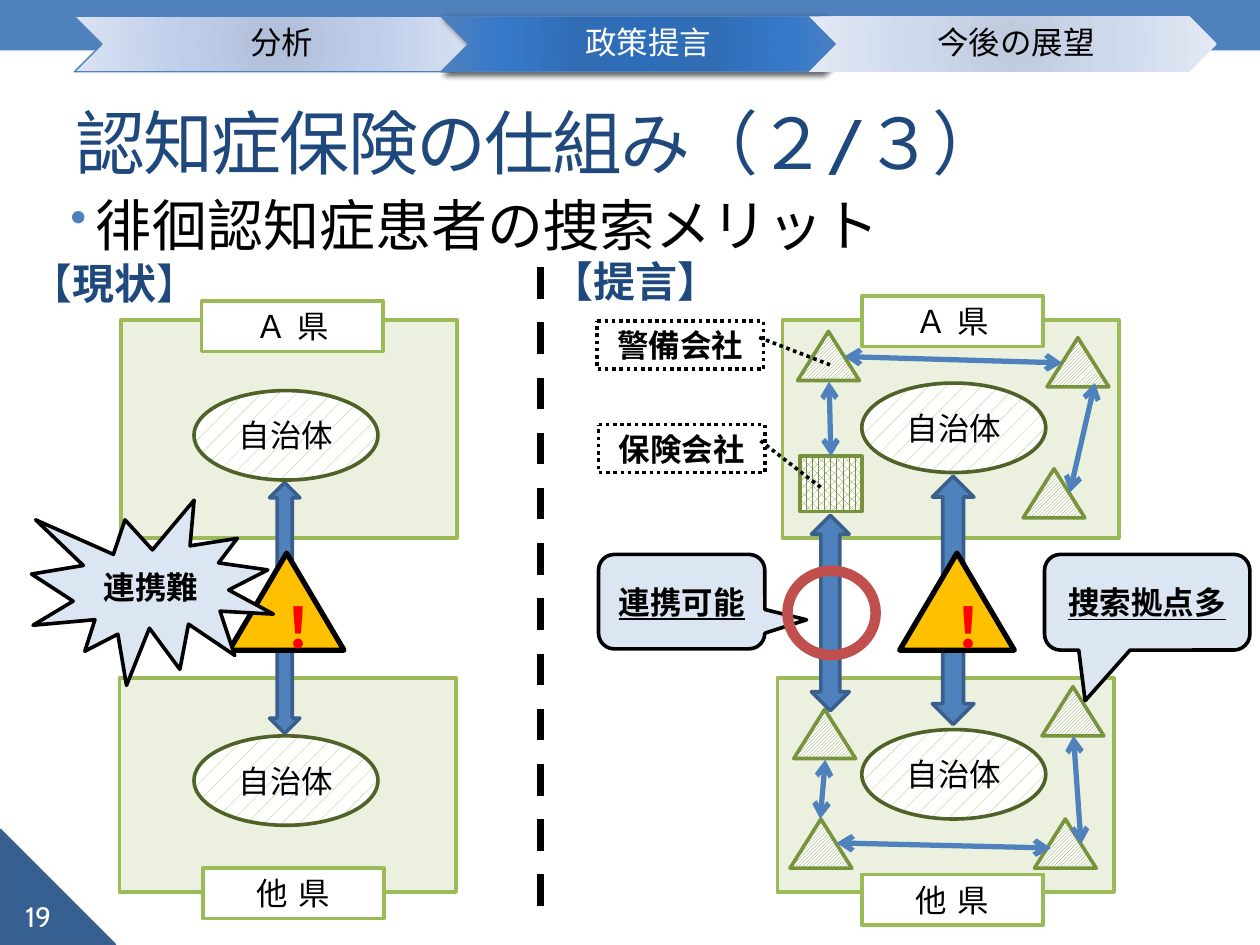
from lxml import etree
from pptx import Presentation
from pptx.dml.color import RGBColor
from pptx.enum.dml import MSO_LINE, MSO_PATTERN
from pptx.enum.shapes import MSO_CONNECTOR, MSO_SHAPE
from pptx.enum.text import MSO_ANCHOR, PP_ALIGN
from pptx.oxml import parse_xml
from pptx.oxml.ns import qn
from pptx.util import Inches, Pt

RECT, OVAL, TRIANGLE = MSO_SHAPE.RECTANGLE, MSO_SHAPE.OVAL, MSO_SHAPE.ISOSCELES_TRIANGLE
DOUBLE_ARROW, BURST = MSO_SHAPE.UP_DOWN_ARROW, MSO_SHAPE.EXPLOSION1
SPEECH, LABEL = MSO_SHAPE.ROUNDED_RECTANGULAR_CALLOUT, MSO_SHAPE.LINE_CALLOUT_1
CHEVRON, CORNER = MSO_SHAPE.CHEVRON, MSO_SHAPE.RIGHT_TRIANGLE
HATCH, SPECKS, WEAVE = (MSO_PATTERN.LIGHT_UPWARD_DIAGONAL, MSO_PATTERN.PERCENT_5,
                        MSO_PATTERN.PERCENT_70)
DOTTED, DASHED = MSO_LINE.ROUND_DOT, MSO_LINE.DASH
CENTER, LEFT = PP_ALIGN.CENTER, PP_ALIGN.LEFT
MIDDLE, TOP = MSO_ANCHOR.MIDDLE, MSO_ANCHOR.TOP

COLUMNS, ROWS = 100, 75
WIDTH, HEIGHT = Inches(10), Inches(7.5)
BLACK, WHITE, BLUE, NAVY = "000000", "FFFFFF", "4F81BD", "1F497D"
GREEN, OLIVE, FOREST, MINT = "9BBB59", "77933C", "4F6228", "EBF1DE"
ICE, EDGE, AMBER, RED, BRICK = "DCE6F2", "3A5F8C", "FFC000", "FF0000", "C0504D"
THIN = 2.08
DRAWING = 'xmlns:a="http://schemas.openxmlformats.org/drawingml/2006/main"'


def rgb(code):
    return RGBColor.from_string(code)


def columns(count):
    return round(WIDTH * count / COLUMNS)


def rows(count):
    return round(HEIGHT * count / ROWS)


def write(shape, text, size=18, color=BLACK, bold=False, underline=False, font="Cabin",
          spacing=0, align=CENTER, anchor=MIDDLE, line_spacing=None):
    """Fill a shape with one paragraph; text is a string or a list of (text, bold)."""
    frame = shape.text_frame
    frame.word_wrap = True
    frame.vertical_anchor = anchor
    para = frame.paragraphs[0]
    para.alignment = align
    para.line_spacing = line_spacing
    for words, heavy in [(text, bold)] if isinstance(text, str) else text:
        span = para.add_run()
        span.text = words
        span.font.size, span.font.name = Pt(size), font
        span.font.bold, span.font.underline = heavy, underline
        span.font.color.rgb = rgb(color)
        properties = span.font._element
        etree.SubElement(properties, qn("a:ea")).set("typeface", "Noto Sans CJK JP")
        if spacing:
            properties.set("spc", str(spacing * 100))
    return para


class Page:
    """The slide, its grid of 100 columns by 75 rows, and its style."""

    def __init__(self, deck):
        self.shapes = deck.slides.add_slide(deck.slide_layouts[6]).shapes

    def shape(self, kind, place, fill=None, line=None, weight=THIN, dash=None,
              pattern=None, adjust=(), text=None, **style):
        left, top, width, height = place
        box = self.shapes.add_shape(kind, columns(left), rows(top), columns(width), rows(height))
        box.shadow.inherit = False
        if pattern:
            box.fill.patterned()
            box.fill.pattern = pattern
            box.fill.fore_color.rgb, box.fill.back_color.rgb = rgb(fill), rgb(WHITE)
        elif fill:
            box.fill.solid()
            box.fill.fore_color.rgb = rgb(fill)
        else:
            box.fill.background()
        if line:
            self.stroke(box.line, line, weight, dash)
        else:
            box.line.fill.background()
        for index, value in enumerate(adjust):
            box.adjustments[index] = value
        if text:
            write(box, text, **style)
        return box

    def stroke(self, line, color, weight, dash=None):
        line.color.rgb, line.width = rgb(color), Pt(weight)
        if dash:
            line.dash_style = dash

    def text(self, place, text, insets=None, **style):
        left, top, width, height = place
        box = self.shapes.add_textbox(columns(left), rows(top), columns(width), rows(height))
        if insets:
            frame = box.text_frame
            frame.margin_left, others = columns(insets[0]), columns(insets[1])
            frame.margin_top = frame.margin_right = frame.margin_bottom = others
        return write(box, text, **style)

    def line(self, start, end, color=BLUE, weight=3, dash=None, arrows=True):
        link = self.shapes.add_connector(MSO_CONNECTOR.STRAIGHT, columns(start[0]),
                                         rows(start[1]), columns(end[0]), rows(end[1]))
        self.stroke(link.line, color, weight, dash)
        etree.SubElement(link._element.spPr, qn("a:effectLst"))
        if arrows:
            for end_name in ("a:headEnd", "a:tailEnd"):
                etree.SubElement(link.line._get_or_add_ln(), qn(end_name)).set("type", "arrow")
        return link

    def tab(self, left, text, stops, line=BLUE, color=BLACK, shadow=False):
        """Draw one navigation chevron with a radial gradient."""
        chevron = self.shape(CHEVRON, (left, 1.3, 32.4, 4.4), line=line, weight=0.75)
        properties = chevron._element.spPr
        marks = "".join(f'<a:gs pos="{position * 1000}"><a:srgbClr val="{code}"/></a:gs>'
                        for position, code in stops)
        gradient = parse_xml(
            f'<a:gradFill {DRAWING} rotWithShape="1"><a:gsLst>{marks}</a:gsLst>'
            '<a:path path="circle"><a:fillToRect l="100000" t="100000" r="100000" b="100000"/>'
            '</a:path></a:gradFill>')
        properties.replace(properties.find(qn("a:noFill")), gradient)
        if shadow:
            properties.find(qn("a:effectLst")).append(parse_xml(
                f'<a:outerShdw {DRAWING} blurRad="{Pt(3)}" dist="{Pt(2)}" dir="2700000">'
                f'<a:srgbClr val="{BLACK}"><a:alpha val="60000"/></a:srgbClr></a:outerShdw>'))
        self.text((left + 2.2, 1.3, 28, 4.4), text, insets=(0.8, 0.3), color=color,
                  line_spacing=0.9)

    def bullet(self, place, text, **style):
        para = self.text(place, text, align=LEFT, anchor=TOP, **style)
        properties = para._p.get_or_add_pPr()
        properties.set("marL", str(columns(2)))
        properties.set("indent", str(-columns(2)))
        for item in (f'<a:buClr {DRAWING}><a:srgbClr val="{BLUE}"/></a:buClr>',
                     f'<a:buSzPct {DRAWING} val="85000"/>', f'<a:buChar {DRAWING} char="•"/>'):
            properties.append(parse_xml(item))

    def guard(self, left, top):
        self.shape(TRIANGLE, (left, top, 4.9, 3.9), OLIVE, OLIVE, pattern=HATCH)

    def town(self, left, top):
        self.shape(OVAL, (left, top, 14.6, 7.1), GREEN, FOREST, pattern=SPECKS, text="自治体")

    def warning(self, left, top):
        self.shape(TRIANGLE, (left, top, 9.1, 7.7), AMBER, BLACK, 3, text="！", size=32,
                   color=RED, bold=True)


def main():
    deck = Presentation()
    deck.slide_width, deck.slide_height = WIDTH, HEIGHT
    page = Page(deck)

    page.shape(RECT, (0, 0, COLUMNS, 4), BLUE)
    page.bullet((4.6, 14.6, 90, 53.3), "徘徊認知症患者の捜索メリット", size=32,
                font="Noto Sans CJK JP")
    for left, top, height in ((61.7, 53.8, 17), (62.1, 25.4, 17.3),
                              (9.5, 53.8, 17), (9.6, 25.4, 17.3)):
        page.shape(RECT, (left, top, 26.7, height), MINT, GREEN)
    for left, top in ((63, 56.3), (82.7, 54.5), (83.1, 26.8), (62.7, 65), (63.3, 26.3),
                      (82.1, 65), (81.2, 37.2)):
        page.guard(left, top)
    insurer = page.shape(RECT, (63.5, 36.2, 4.9, 4.4), OLIVE, OLIVE, pattern=WEAVE)

    for place in ((21.4, 38.3, 2.4, 19.9), (74, 37.8, 3.3, 19.7), (64.4, 40.9, 3, 15.5)):
        page.shape(DOUBLE_ARROW, place, BLUE, EDGE)
    for start, end in (((84.3, 28.8), (67, 28.3)), ((84.9, 39.1), (86.9, 30.4)),
                       ((65.1, 65), (65.5, 60.3)), ((85.8, 67), (85.2, 58.4)),
                       ((83.4, 67.3), (66.4, 66.9))):
        page.line(start, end)
    page.line((65.9, 36.2), (65.8, 30.3)).begin_connect(insurer, 0)
    page.line((42.9, 21.2), (42.9, 73), BLACK, 4.5, DASHED, arrows=False)

    for left, top in ((15.4, 31), (15.4, 58.4), (68.4, 30.4), (68.4, 57.9)):
        page.town(left, top)
    for left, top in ((18.2, 43.9), (71.4, 43.9)):
        page.warning(left, top)
    page.shape(BURST, (2.5, 39.7, 19.2, 14.7), ICE, BLACK, text="連携難", bold=True)
    for left, top, name in ((16, 23.9, "Ａ県"), (16.1, 68.9, "他県"),
                            (68.4, 23.5, "Ａ県"), (68.4, 69.4, "他県")):
        page.shape(RECT, (left, top, 14.4, 4), WHITE, GREEN, text=name, spacing=6)

    for place, adjust, text in (
            ((47.5, 44, 13.2, 7.5), (0.751, 0.192, 0.167), "連携可能"),
            ((82.9, 44, 16.3, 7.6), (-0.302, 1.029, 0.167), "捜索拠点多")):
        page.shape(SPEECH, place, ICE, BLACK, adjust=adjust, text=text, bold=True,
                   underline=True)
    for left, top, tip, text in ((47.5, 33.7, (1.308, 1.335), "保険会社"),
                                 (47.4, 25.5, (0.909, 1.399), "警備会社")):
        page.shape(LABEL, (left, top, 13.2, 3.8), line=BLACK, dash=DOTTED,
                   adjust=(0.338, 0.974, *tip), text=text, bold=True)
    page.shape(OVAL, (62.5, 45.3, 7, 6.7), line=BRICK, weight=6)

    page.text((1.2, 19.8, 15.7, 5.2), [("【", False), ("現状", True), ("】", False)],
              size=24, color=NAVY)
    page.text((42, 19.7, 16.9, 5.2), "【提言】", size=24, color=NAVY, bold=True)
    page.tab(5.9, "分析", ((0, "B0BED9"), (45, "BECDEA"), (100, "DBE3F3")))
    page.tab(35, "政策提言", ((0, "2C6CB9"), (34, "316DB5"), (70, "3679CA"), (100, BLUE)),
             color=WHITE, shadow=True)
    page.tab(64.2, "今後の展望", ((0, "BFC9DC"), (45, "CDD8EC"), (100, "E3E9F5")), line=None)
    page.shape(CORNER, (0, 65.9, 9.1, 9.1), "376092", EDGE, text="19", size=16, color=WHITE)
    page.text((5, 5.8, 90, 10.8), "認知症保険の仕組み（２/３）", size=40, color=NAVY,
              spacing=-1, align=LEFT)
    deck.save("out.pptx")


if __name__ == "__main__":
    main()
